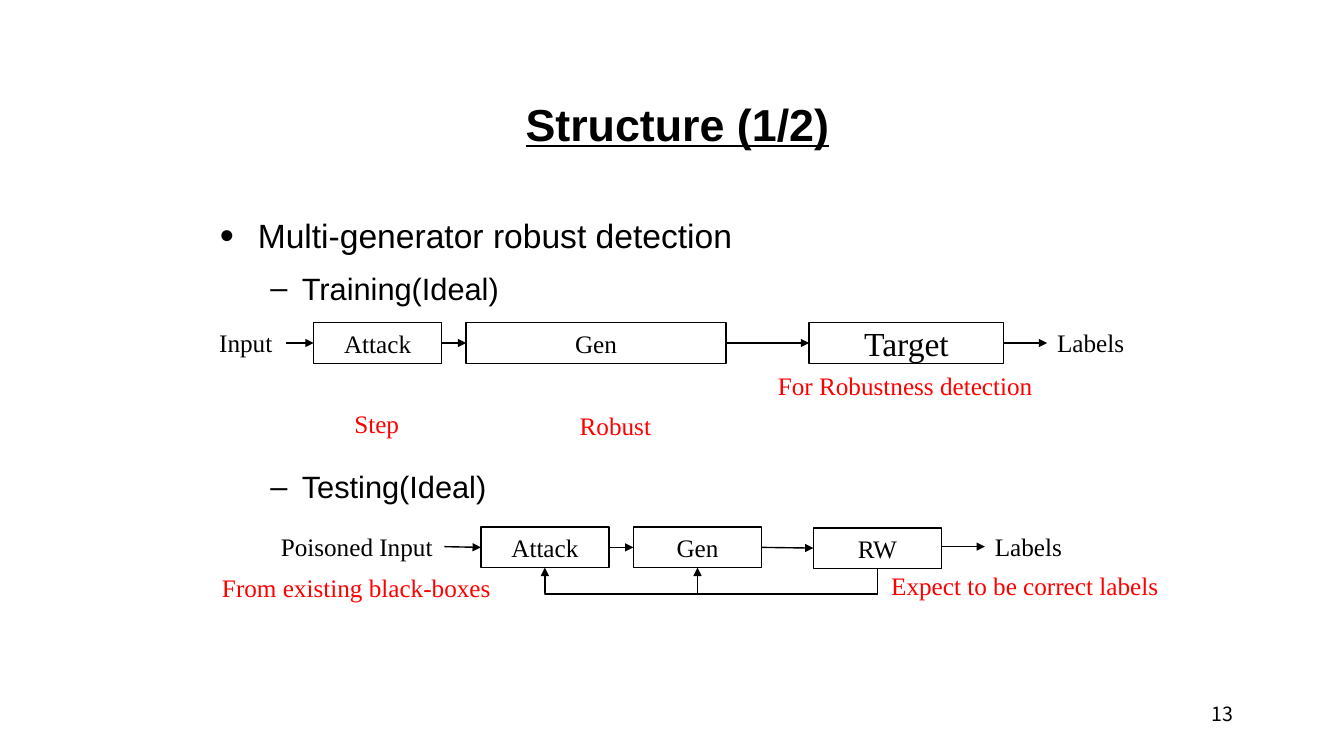
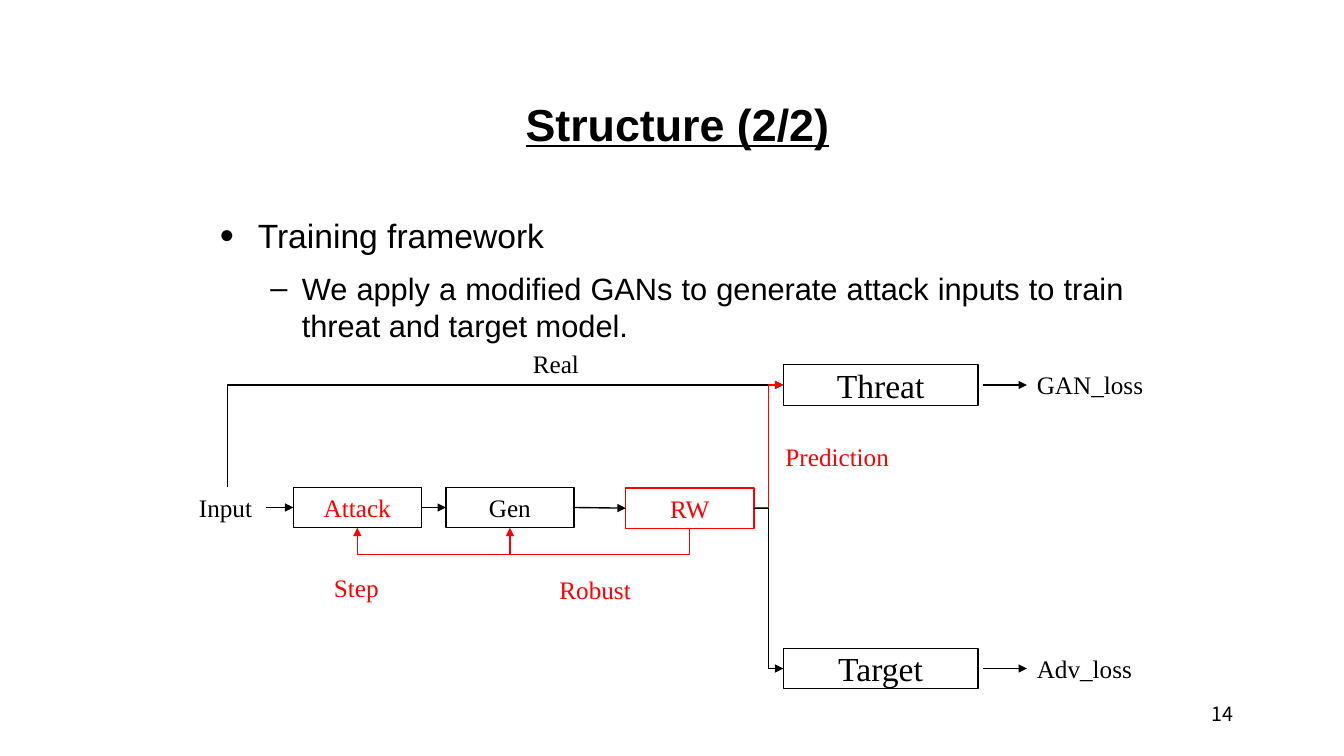
"""Build the two slides on the multi-generator structure."""
from dataclasses import dataclass

from lxml import etree
from pptx import Presentation
from pptx.dml.color import RGBColor
from pptx.enum import shapes, text
from pptx.oxml.ns import qn
from pptx.util import Pt

BLACK, RED = "000000", "FF0000"
SANS, SERIF, NUMBER_FONT = "Arial", "Times New Roman", "Noto Sans CJK SC"
BOX_W, WIDE_W, BOX_H = 91.5, 139, 29
GEN_STEP, RW_STEP = 109, 237.5
INPUT_ARROW, OUTPUT_ARROW, LOOP_DROP = 19.5, 31, 18
LEFT, RIGHT, CENTER, JUSTIFY = (
    text.PP_ALIGN.LEFT, text.PP_ALIGN.RIGHT, text.PP_ALIGN.CENTER, text.PP_ALIGN.JUSTIFY)


@dataclass
class Box:
    """An outlined block of the diagram."""
    name: str
    x: float
    y: float
    w: float = BOX_W
    size: float = 18
    color: str = BLACK
    line: str = BLACK

    @property
    def right(self) -> float:
        return self.x + self.w

    @property
    def mid(self) -> float:
        return self.y + BOX_H / 2

    @property
    def left_port(self) -> tuple:
        return self.x, self.mid

    @property
    def right_port(self) -> tuple:
        return self.right, self.mid

    @property
    def bottom_port(self) -> tuple:
        return self.x + self.w / 2, self.y + BOX_H


@dataclass
class Label:
    """Free text beside the diagram."""
    words: str
    x: float
    y: float
    w: float
    color: str = BLACK


@dataclass
class Bullet:
    """One paragraph of the body text."""
    words: str
    level: int = 0
    before: float = 10


def rgb(value: str) -> RGBColor:
    """Turn a hex string into a colour."""
    return RGBColor.from_string(value)


def write(p, words: str, size: float, font: str = SERIF, color: str = BLACK, align=LEFT):
    """Add one formatted run to a paragraph."""
    p.alignment = align
    r = p.add_run()
    r.text = words
    r.font.size, r.font.name = Pt(size), font
    r.font.color.rgb = rgb(color)
    return r


def add_text(s, x: float, y: float, w: float, h: float, wrap: bool):
    """Add an empty text box and return its frame."""
    tf = s.shapes.add_textbox(Pt(x), Pt(y), Pt(w), Pt(h)).text_frame
    tf.word_wrap = wrap
    return tf


def add_label(s, label: Label) -> None:
    """Draw a free label that fits its text."""
    tf = add_text(s, label.x, label.y, label.w, BOX_H, False)
    tf.auto_size = text.MSO_AUTO_SIZE.SHAPE_TO_FIT_TEXT
    write(tf.paragraphs[0], label.words, 18, color=label.color)


def add_box(s, box: Box) -> Box:
    """Draw an outlined block with centred text."""
    sp = s.shapes.add_shape(shapes.MSO_SHAPE.RECTANGLE, Pt(box.x), Pt(box.y), Pt(box.w), Pt(BOX_H))
    sp.shadow.inherit = False
    sp.fill.background()
    sp.line.color.rgb, sp.line.width = rgb(box.line), Pt(1)
    tf = sp.text_frame
    tf.vertical_anchor = text.MSO_ANCHOR.MIDDLE
    write(tf.paragraphs[0], box.name, box.size, color=box.color, align=CENTER)
    return box


def add_arrow(s, start: tuple, end: tuple, color: str = BLACK,
              kind=shapes.MSO_CONNECTOR.STRAIGHT):
    """Draw a connector with a triangular head at its end."""
    c = s.shapes.add_connector(kind, *(Pt(v) for v in (*start, *end)))
    c.line.color.rgb, c.line.width = rgb(color), Pt(1)
    etree.SubElement(c.line._get_or_add_ln(), qn("a:tailEnd"), type="triangle")
    etree.SubElement(c._element.spPr, qn("a:effectLst"))
    return c


def add_elbow(s, start: tuple, end: tuple, color: str = BLACK) -> None:
    """Draw a bent arrow that leaves sideways."""
    add_arrow(s, start, end, color, shapes.MSO_CONNECTOR.ELBOW)


def add_upright_elbow(s, start: tuple, end: tuple, color: str = BLACK, drop: float = 0) -> None:
    """Draw a bent arrow that leaves vertically, first dropping if asked to."""
    dx, dy = end[0] - start[0], end[1] - start[1]
    cx, cy = start[0] + dx / 2, start[1] + dy / 2
    c = add_arrow(s, (cx - dy / 2, cy + dx / 2), (cx + dy / 2, cy - dx / 2), color,
                  shapes.MSO_CONNECTOR.ELBOW)
    sp_pr = c._element.spPr
    sp_pr.find(qn("a:xfrm")).set("rot", "5400000")
    geom = sp_pr.find(qn("a:prstGeom"))
    if drop:
        guides = geom.find(qn("a:avLst"))
        etree.SubElement(guides, qn("a:gd"), name="adj1", fmla=f"val {round(drop / dy * 100000)}")
    else:
        geom.set("prst", "bentConnector2")


def add_output(s, x: float, mid: float, words: str, w: float) -> None:
    """Draw an arrow to a result label."""
    add_arrow(s, (x, mid), (x + OUTPUT_ARROW, mid))
    add_label(s, Label(words, x + OUTPUT_ARROW, mid - BOX_H / 2, w))


def add_input(s, attack: Box) -> None:
    """Draw the input label, its arrow and the notes below a training chain."""
    x, y = attack.x, attack.y
    add_label(s, Label("Input", x - 74.5, y, 55))
    add_arrow(s, (x - INPUT_ARROW, attack.mid), attack.left_port)
    add_label(s, Label("Step", x + 22, y + 57.5, 47, RED))
    add_label(s, Label("Robust", x + 183, y + 59, 66, RED))


def add_loop_chain(s, x: float, y: float, accent: str) -> tuple:
    """Draw Attack, Gen and RW with feedback from RW to both others."""
    attack = add_box(s, Box("Attack", x, y, color=accent))
    gen = add_box(s, Box("Gen", x + GEN_STEP, y))
    rw = add_box(s, Box("RW", x + RW_STEP, y + 0.5, color=accent, line=accent))
    add_arrow(s, attack.right_port, gen.left_port)
    add_arrow(s, gen.right_port, rw.left_port)
    for target in (gen, attack):
        add_upright_elbow(s, rw.bottom_port, target.bottom_port, accent, LOOP_DROP)
    return attack, rw


def add_body(s, bullets: list) -> None:
    """Write the bulleted body text."""
    tf = add_text(s, 150, 150, 660, 36, True)
    for i, bullet in enumerate(bullets):
        p = tf.add_paragraph() if i else tf.paragraphs[0]
        p.level, p.space_before = bullet.level, Pt(bullet.before)
        write(p, bullet.words, (24, 22)[bullet.level], SANS, align=JUSTIFY)
        margin, hang, size, mark = ((27, 27, 120, "•"), (58.5, 22.5, 100, "–"))[bullet.level]
        p_pr = p._p.get_or_add_pPr()
        p_pr.set("marL", str(Pt(margin)))
        p_pr.set("indent", str(-Pt(hang)))
        etree.SubElement(p_pr, qn("a:buSzPct"), val=str(size * 1000))
        etree.SubElement(p_pr, qn("a:buFont"), typeface=SANS)
        etree.SubElement(p_pr, qn("a:buChar"), char=mark)


def add_slide(prs, title: str, number: int, bullets: list):
    """Add a slide with title, body text and number."""
    s = prs.slides.add_slide(prs.slide_layouts[5])
    sp = s.shapes.title
    sp.left, sp.top, sp.width, sp.height = Pt(88), Pt(37.5), Pt(792), Pt(101)
    tf = sp.text_frame
    tf.auto_size = text.MSO_AUTO_SIZE.NONE
    tf.vertical_anchor = text.MSO_ANCHOR.MIDDLE
    r = write(tf.paragraphs[0], title, 32, SANS, align=CENTER)
    r.font.bold = r.font.underline = True
    add_body(s, bullets)
    tf = add_text(s, 688, 492, 200, 36, True)
    tf.vertical_anchor = text.MSO_ANCHOR.MIDDLE
    write(tf.paragraphs[0], str(number), 14, NUMBER_FONT, align=RIGHT)
    return s


def build_detection(prs) -> None:
    """Build the slide on training and testing."""
    s = add_slide(prs, "Structure (1/2)", 13, [
        Bullet("Multi-generator robust detection", before=2),
        Bullet("Training(Ideal)", 1),
        Bullet("Testing(Ideal)", 1, 115.5)])

    attack = add_box(s, Box("Attack", 224, 230.5))
    gen = add_box(s, Box("Gen", attack.x + GEN_STEP, attack.y, 185.5))
    target = add_box(s, Box("Target", 578, attack.y, WIDE_W, 24))
    add_input(s, attack)
    add_arrow(s, attack.right_port, gen.left_port)
    add_arrow(s, gen.right_port, target.left_port)
    add_output(s, *target.right_port, "Labels", 63)

    attack, rw = add_loop_chain(s, 343.5, 376.5, BLACK)
    add_arrow(s, (317.5, 390.5), attack.left_port)
    add_output(s, rw.right, 390.5, "Labels", 63)
    for label in (
            Label("Poisoned Input", 193.5, 376, 124),
            Label("For Robustness detection", 548.5, 261, 198, RED),
            Label("From existing black-boxes", 151.5, 405, 208, RED),
            Label("Expect to be correct labels", 629.5, 404, 207, RED)):
        add_label(s, label)


def build_framework(prs) -> None:
    """Build the slide on the training framework."""
    s = add_slide(prs, "Structure (2/2)", 14, [
        Bullet("Training framework", before=2),
        Bullet("We apply a modified GANs to generate attack inputs to train "
               "threat and target model.", 1)])
    attack, rw = add_loop_chain(s, 209.5, 348, RED)
    add_input(s, attack)
    threat = add_box(s, Box("Threat", 559.5, 260.5, WIDE_W, 24))
    target = add_box(s, Box("Target", threat.x, 463, WIDE_W, 24))
    add_upright_elbow(s, (162.5, attack.y), threat.left_port)
    add_elbow(s, rw.right_port, threat.left_port, RED)
    add_elbow(s, rw.right_port, target.left_port)
    add_output(s, threat.right + 4, threat.mid, "GAN_loss", 91)
    add_output(s, target.right + 4, target.mid, "Adv_loss", 83)
    add_label(s, Label("Real", 373.5, 245.5, 48))
    add_label(s, Label("Prediction", 554, 312, 89, RED))


def main() -> None:
    """Create and save the presentation."""
    prs = Presentation()
    prs.slide_width, prs.slide_height = Pt(960), Pt(540)
    build_detection(prs)
    build_framework(prs)
    prs.save("out.pptx")


if __name__ == "__main__":
    main()
